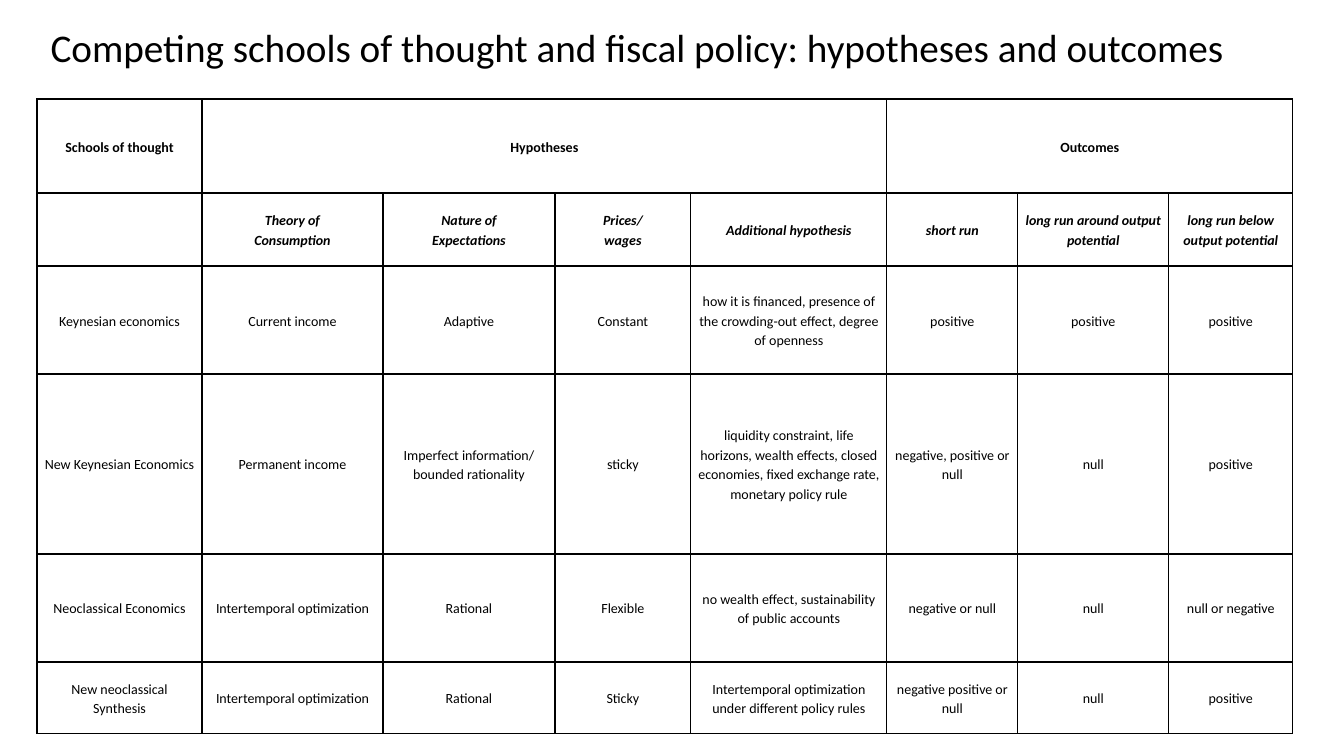
"""Build a slide comparing schools of thought on fiscal policy."""
import pptx
import pptx.dml.color
import pptx.enum.text
import pptx.oxml
import pptx.oxml.ns
import pptx.util

COLORS = {"ink": "000000"}
INK = pptx.dml.color.RGBColor.from_string(COLORS["ink"])
FONT = "Calibri"
CENTER = pptx.enum.text.PP_ALIGN.CENTER
MIDDLE = pptx.enum.text.MSO_ANCHOR.MIDDLE


def px(n):
    return pptx.util.Emu(round(n * 914400 / 100.8))


def style(tf, size, bold=False, italic=False, spacing=1.0):
    for p in tf.paragraphs:
        p.alignment = CENTER
        p.line_spacing = spacing
        for r in p.runs:
            r.font.name = FONT
            r.font.size = pptx.util.Pt(size)
            r.font.bold = bold
            r.font.italic = italic
            r.font.color.rgb = INK


prs = pptx.Presentation()
prs.slide_width, prs.slide_height = px(1344), px(756)
s = prs.slides.add_slide(prs.slide_layouts[6])

col_widths = [165, 181, 172, 136, 196, 131, 151, 124]
row_heights = [94, 73, 108, 180, 108, 72]
rows = [
    ["Schools of thought", "Hypotheses", "", "", "", "Outcomes", "", ""],
    ["", "Theory of\nConsumption", "Nature of\nExpectations", "Prices/\nwages",
     "Additional hypothesis", "short run", "long run around output potential",
     "long run below output potential"],
    ["Keynesian economics", "Current income", "Adaptive", "Constant",
     "how it is financed, presence of the crowding-out effect, degree of openness",
     "positive", "positive", "positive"],
    ["New Keynesian Economics", "Permanent income",
     "Imperfect information/ bounded rationality", "sticky",
     "liquidity constraint, life horizons, wealth effects, closed economies, "
     "fixed exchange rate, monetary policy rule",
     "negative, positive or null", "null", "positive"],
    ["Neoclassical Economics", "Intertemporal optimization", "Rational", "Flexible",
     "no wealth effect, sustainability of public accounts",
     "negative or null", "null", "null or negative"],
    ["New neoclassical Synthesis", "Intertemporal optimization", "Rational", "Sticky",
     "Intertemporal optimization under different policy rules",
     "negative positive or null", "null", "positive"],
]

frame = s.shapes.add_table(len(rows), len(col_widths), px(37), px(99),
                           px(sum(col_widths)), px(sum(row_heights)))
table = frame.table
table.first_row = table.horz_banding = False
for col, width in zip(table.columns, col_widths):
    col.width = px(width)
for row, height in zip(table.rows, row_heights):
    row.height = px(height)

for i, texts in enumerate(rows):
    for j, text in enumerate(texts):
        cell = table.cell(i, j)
        cell.text_frame.text = text
        style(cell.text_frame, 10, bold=i < 2, italic=i == 1, spacing=1.15)
        cell.vertical_anchor = MIDDLE
        cell.margin_left = cell.margin_right = px(7)
        cell.margin_top = cell.margin_bottom = 0
        tcPr = cell._tc.get_or_add_tcPr()
        for side in ("lnL", "lnR", "lnT", "lnB"):
            tcPr.append(pptx.oxml.parse_xml(
                f'<a:{side} {pptx.oxml.ns.nsdecls("a")} w="12700"><a:solidFill>'
                f'<a:srgbClr val="{COLORS["ink"]}"/></a:solidFill></a:{side}>'))
        cell.fill.background()

for first, last in ((1, 4), (5, 7)):
    table.cell(0, first).merge(table.cell(0, last))

title = s.shapes.add_textbox(px(37), px(18), px(1200), px(57))
tf = title.text_frame
tf.word_wrap = True
tf.auto_size = pptx.enum.text.MSO_AUTO_SIZE.SHAPE_TO_FIT_TEXT
tf.text = "Competing schools of thought and fiscal policy: hypotheses and outcomes"
style(tf, 28)

prs.save("out.pptx")
